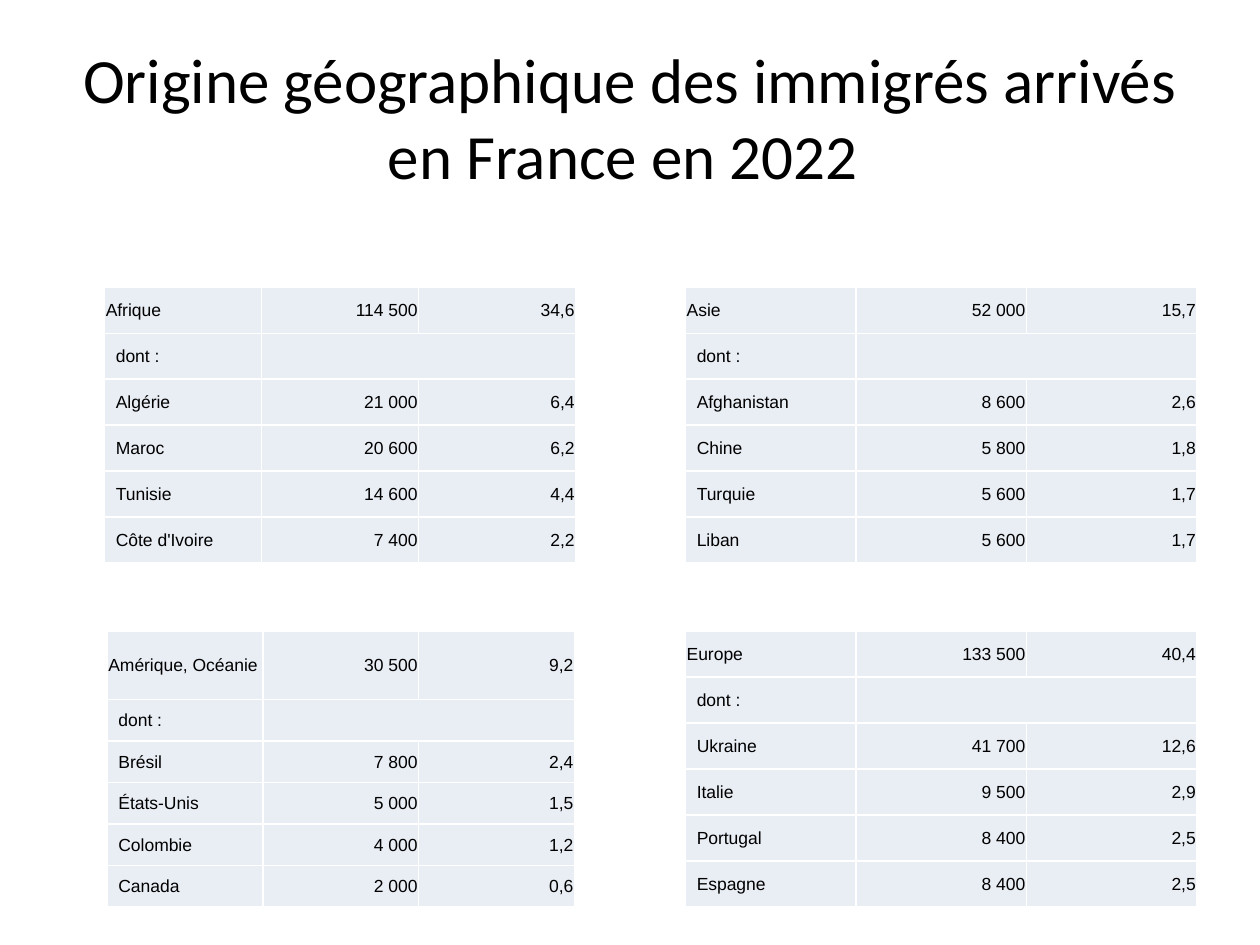
import dataclasses

import pptx
import pptx.dml.color
import pptx.enum.text
import pptx.oxml
import pptx.oxml.ns
import pptx.util

Inches = pptx.util.Inches
Pt = pptx.util.Pt
Align = pptx.enum.text.PP_ALIGN
Anchor = pptx.enum.text.MSO_ANCHOR


@dataclasses.dataclass(frozen=True)
class Theme:
    ink: str = "000000"
    cell: str = "E9EDF4"
    rule: str = "FFFFFF"
    head: str = "Calibri"
    body: str = "Arial"
    big: int = 36
    small: int = 10
    line: int = 1


THEME = Theme()
WIDE, HIGH = 10, 7.5
TOPS = (2.28, 5.01)
DEPTH = 2.19
PAD, INDENT = 0.01, 0.09

TITLE = "Origine géographique des immigrés arrivés en France en 2022 "
# Each region: left, top, width, height of first row, rows of data
REGIONS = (
    (0.83, TOPS[0], 3.74, DEPTH / 6, (
        ("Afrique", "114 500", "34,6"),
        ("dont :",),
        ("Algérie", "21 000", "6,4"),
        ("Maroc", "20 600", "6,2"),
        ("Tunisie", "14 600", "4,4"),
        ("Côte d'Ivoire", "7 400", "2,2"))),
    (5.44, TOPS[0], 4.06, DEPTH / 6, (
        ("Asie", "52 000", "15,7"),
        ("dont :",),
        ("Afghanistan", "8 600", "2,6"),
        ("Chine", "5 800", "1,8"),
        ("Turquie", "5 600", "1,7"),
        ("Liban", "5 600", "1,7"))),
    (5.44, TOPS[1], 4.06, DEPTH / 6, (
        ("Europe", "133 500", "40,4"),
        ("dont :",),
        ("Ukraine", "41 700", "12,6"),
        ("Italie", "9 500", "2,9"),
        ("Portugal", "8 400", "2,5"),
        ("Espagne", "8 400", "2,5"))),
    (0.85, TOPS[1], 3.71, 0.54, (
        ("Amérique, Océanie", "30 500", "9,2"),
        ("dont :",),
        ("Brésil", "7 800", "2,4"),
        ("États-Unis", "5 000", "1,5"),
        ("Colombie", "4 000", "1,2"),
        ("Canada", "2 000", "0,6"))),
)


def color(code):
    return pptx.dml.color.RGBColor.from_string(code)


def write(para, text, face, size, align):
    para.alignment = align
    run = para.add_run()
    run.text = text
    run.font.name = face
    run.font.size = Pt(size)
    run.font.color.rgb = color(THEME.ink)


def add_title(slide):
    title = slide.shapes.title
    title.left, title.top = Inches(WIDE * 0.05), Inches(HIGH * 0.04)
    title.width, title.height = Inches(WIDE * 0.9), Inches(1.25)
    frame = title.text_frame
    frame.word_wrap = True
    frame.auto_size = pptx.enum.text.MSO_AUTO_SIZE.NONE
    frame.vertical_anchor = Anchor.MIDDLE
    write(frame.paragraphs[0], TITLE, THEME.head, THEME.big, Align.CENTER)


def add_rules(cell):
    """Draw a line on all four sides of a cell."""
    props = cell._tc.get_or_add_tcPr()
    for side in "LRTB":
        props.append(pptx.oxml.parse_xml(
            f'<a:ln{side} {pptx.oxml.ns.nsdecls("a")} w="{Pt(THEME.line)}">'
            f'<a:solidFill><a:srgbClr val="{THEME.rule}"/></a:solidFill>'
            f'</a:ln{side}>'))


def style_cell(cell, left):
    cell.vertical_anchor = Anchor.MIDDLE
    cell.margin_left = Inches(left)
    cell.margin_right = cell.margin_top = Inches(PAD)
    cell.margin_bottom = 0
    add_rules(cell)
    cell.fill.solid()
    cell.fill.fore_color.rgb = color(THEME.cell)


def add_region(slide, left, top, width, first, data):
    count = len(data)
    frame = slide.shapes.add_table(
        count, 3, Inches(left), Inches(top), Inches(width), Inches(DEPTH))
    table = frame.table
    table.first_row = table.horz_banding = False
    for col in table.columns:
        col.width = Inches(width / 3)
    for row in table.rows:
        row.height = Inches((DEPTH - first) / (count - 1))
    table.rows[0].height = Inches(first)
    for i, texts in enumerate(data):
        for j in range(3):
            cell = table.cell(i, j)
            style_cell(cell, INDENT if i and not j else PAD)
            if j < len(texts):
                write(cell.text_frame.paragraphs[0], texts[j], THEME.body,
                      THEME.small, Align.RIGHT if j else Align.LEFT)
        if len(texts) == 1:
            table.cell(i, 1).merge(table.cell(i, 2))


def main():
    deck = pptx.Presentation()
    deck.slide_width, deck.slide_height = Inches(WIDE), Inches(HIGH)
    slide = deck.slides.add_slide(deck.slide_layouts[5])
    add_title(slide)
    for region in REGIONS:
        add_region(slide, *region)
    deck.save("out.pptx")


if __name__ == "__main__":
    main()
